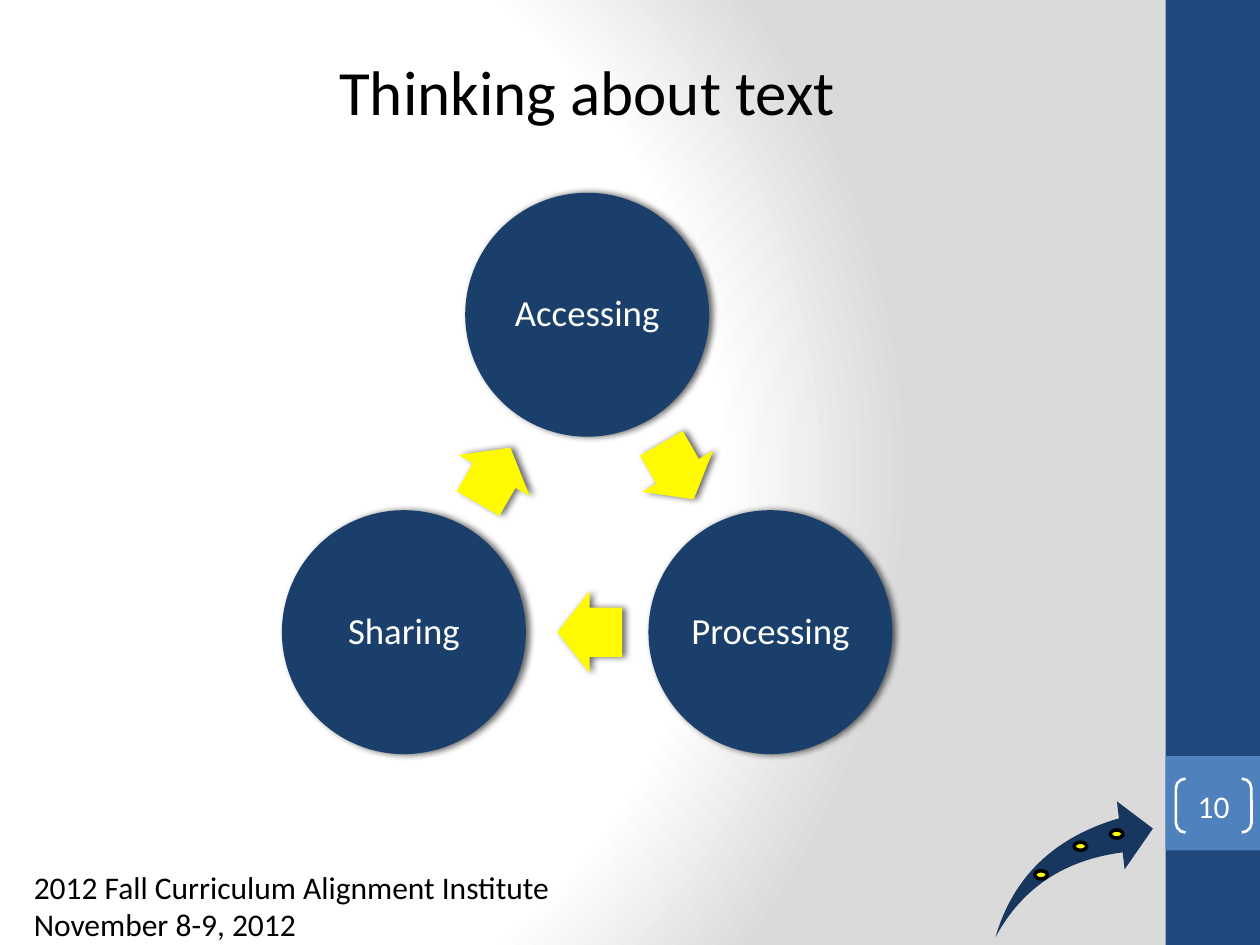
from math import cos, radians, sin

from pptx import Presentation
from pptx.dml.color import RGBColor
from pptx.enum.shapes import MSO_SHAPE
from pptx.enum.text import MSO_ANCHOR, PP_ALIGN
from pptx.oxml import parse_xml
from pptx.oxml.ns import nsdecls
from pptx.util import Inches, Pt

WHITE = RGBColor(0xFF, 0xFF, 0xFF)
BLACK = RGBColor(0, 0, 0)
NAVY = RGBColor(0x1F, 0x49, 0x7D)
BLUE = RGBColor(0x4F, 0x81, 0xBD)
DARK = RGBColor(0x17, 0x37, 0x5E)
DISC = RGBColor(0x1B, 0x3F, 0x6B)
GOLD = RGBColor(0xFF, 0xFA, 0x00)
YELLOW = RGBColor(0xFF, 0xFF, 0x00)
GREY = RGBColor(0xDA, 0xDA, 0xDA)
WIDE, HIGH = 10, 7.5


def write(shape, text, size=18, color=BLACK, align=PP_ALIGN.LEFT,
          anchor=MSO_ANCHOR.MIDDLE, inset=None, lead=None):
    """Fill a shape with formatted text, one paragraph a line."""
    frame = shape.text_frame
    frame.word_wrap = True
    frame.vertical_anchor = anchor
    if inset is not None:
        frame.margin_left = frame.margin_right = Inches(inset)
        frame.margin_top = frame.margin_bottom = Inches(inset)
    frame.text = text
    for para in frame.paragraphs:
        para.alignment = align
        para.line_spacing = lead
        font = para.runs[0].font
        font.name, font.size, font.color.rgb = "Calibri", Pt(size), color


def label(slide, box, text, **form):
    """Add a text box."""
    write(slide.shapes.add_textbox(*map(Inches, box)), text, **form)


def draw(parent, kind, box, fill=None, line=None, width=1.5, adjust=()):
    """Add a plain preset shape."""
    shape = parent.shapes.add_shape(kind, *map(Inches, box))
    shape.shadow.inherit = False
    if fill is None:
        shape.fill.background()
    else:
        shape.fill.solid()
        shape.fill.fore_color.rgb = fill
    if line is None:
        shape.line.fill.background()
    else:
        shape.line.color.rgb = line
        shape.line.width = Pt(width)
    for index, value in enumerate(adjust):
        shape.adjustments[index] = value
    return shape


def shade(shape):
    """Give a shape a soft shadow to its right."""
    effects = shape._element.spPr.find(
        "{http://schemas.openxmlformats.org/drawingml/2006/main}effectLst")
    effects.append(parse_xml(
        f'<a:outerShdw {nsdecls("a")} blurRad="{Pt(4)}" dist="{Pt(2)}" dir="0" '
        'rotWithShape="0"><a:srgbClr val="000000"><a:alpha val="60000"/>'
        '</a:srgbClr></a:outerShdw>'))


def paint(slide):
    """Set the round gradient behind the slide."""
    stops = "".join(
        f'<a:gs pos="{share * 1000}"><a:srgbClr val="{color}"/></a:gs>'
        for share, color in ((0, WHITE), (75, WHITE), (100, GREY)))
    slide._element.cSld.insert(0, parse_xml(
        f'<p:bg {nsdecls("p", "a")}><p:bgPr><a:gradFill rotWithShape="1">'
        f'<a:gsLst>{stops}</a:gsLst><a:path path="circle">'
        '<a:fillToRect l="20000" t="50000" r="100000" b="50000"/></a:path>'
        '</a:gradFill><a:effectLst/></p:bgPr></p:bg>'))


def band(slide, left, top, wide, high):
    """Draw the side band with its page number."""
    draw(slide, MSO_SHAPE.RECTANGLE, (left, top, wide, high), NAVY)
    tile = top + high * 0.8
    draw(slide, MSO_SHAPE.RECTANGLE, (left, tile, wide, wide), BLUE)
    mark = draw(slide, MSO_SHAPE.DOUBLE_BRACKET,
                (left + wide * 0.11, tile + wide * 0.24, wide * 0.8, wide * 0.57),
                line=WHITE, adjust=(0.18,))
    write(mark, "10", color=WHITE, align=PP_ALIGN.CENTER, inset=0)


def swoosh(slide, left, top, wide, high):
    """Draw the curved arrow with its three dots."""
    group = slide.shapes.add_group_shape()
    draw(group, MSO_SHAPE.SWOOSH_ARROW, (left, top, wide, high), DARK,
         adjust=(0.25, 0.25))
    for across, down in ((0.25, 0.51), (0.5, 0.3), (0.73, 0.21)):
        draw(group, MSO_SHAPE.OVAL,
             (left + wide * across, top + high * down, wide * 0.08, high * 0.06),
             YELLOW, BLACK, 2)


def cycle(slide, left, top, wide, names):
    """Draw a ring of named discs with an arrow after each."""
    group = slide.shapes.add_group_shape()
    disc, ring = wide * 0.4, wide * 0.347
    long, thick, back = disc * 0.265, disc * 0.337, 0.02
    midx, midy = left + wide / 2, top + disc / 2 + ring
    step = 360 / len(names)
    for index, name in enumerate(names):
        turn = radians(index * step - 90)
        x, y = midx + ring * cos(turn), midy + ring * sin(turn)
        ball = draw(group, MSO_SHAPE.OVAL,
                    (x - disc / 2, y - disc / 2, disc, disc), DISC)
        write(ball, name, size=21, color=WHITE, align=PP_ALIGN.CENTER,
              inset=0.03, lead=0.9)
        half = turn + radians(step / 2)
        way = half + radians(90)
        reach = ring * cos(radians(step / 2))
        x = midx + reach * cos(half) - back * cos(way)
        y = midy + reach * sin(half) - back * sin(way)
        arrow = draw(group, MSO_SHAPE.RIGHT_ARROW,
                     (x - long / 2, y - thick / 2, long, thick), GOLD,
                     adjust=(0.6, 0.5))
        arrow.rotation = (index + 0.5) * step
        shade(ball)
        shade(arrow)


def main():
    """Build and save the slide."""
    deck = Presentation()
    deck.slide_width, deck.slide_height = Inches(WIDE), Inches(HIGH)
    slide = deck.slides.add_slide(deck.slide_layouts[6])
    paint(slide)
    band(slide, WIDE * 0.925, 0, WIDE * 0.075, HIGH)
    swoosh(slide, 7.9, 6.36, 1.25, 1.08)
    label(slide, (0.17, 6.94, 7.17, 0.49),
          "2012 Fall Curriculum Alignment Institute\nNovember 8-9, 2012")
    label(slide, (0.32, 0.37, 8.68, 0.71), "Thinking about text", size=36,
          align=PP_ALIGN.CENTER, anchor=MSO_ANCHOR.TOP)
    cycle(slide, 2.24, 1.53, 4.84, ("Accessing", "Processing", "Sharing"))
    deck.save("out.pptx")


if __name__ == "__main__":
    main()
